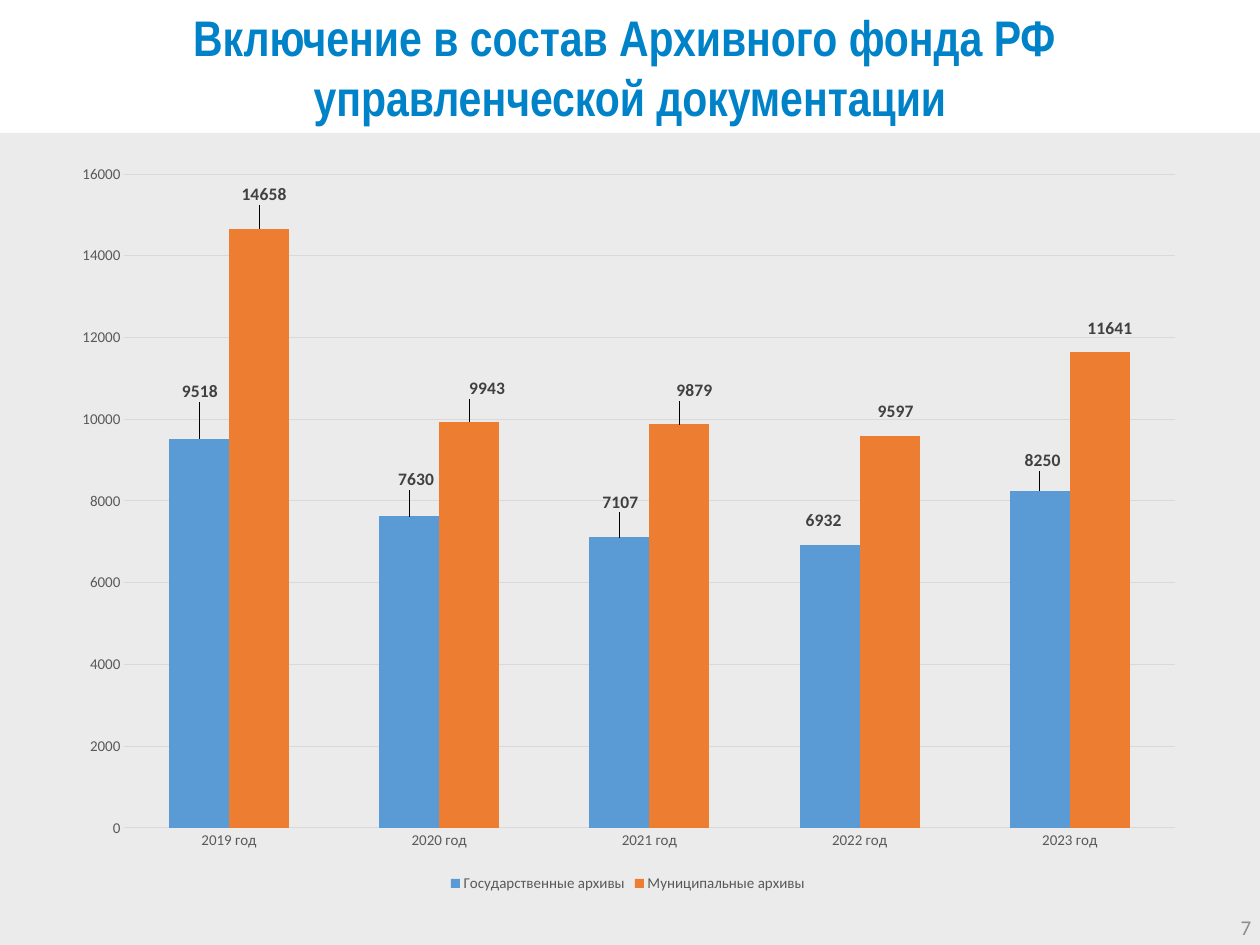
from lxml.etree import SubElement
from pptx import Presentation
from pptx.chart.data import CategoryChartData
from pptx.dml.color import RGBColor
from pptx.enum.chart import XL_CHART_TYPE, XL_LABEL_POSITION, XL_LEGEND_POSITION, XL_TICK_MARK
from pptx.enum.shapes import MSO_SHAPE
from pptx.enum.text import MSO_ANCHOR, MSO_AUTO_SIZE, PP_ALIGN
from pptx.oxml import parse_xml
from pptx.oxml.ns import nsdecls, qn
from pptx.util import Pt

PIXEL = 10160
TITLE = ["Включение в состав Архивного фонда РФ ", "управленческой документации"]
YEARS = ["2019 год", "2020 год", "2021 год", "2022 год", "2023 год"]
SERIES = [
    {
        "name": "Государственные архивы",
        "values": [9518, 7630, 7107, 6932, 8250],
        "color": "5B9BD5",
        "label_shifts": [(1, -33), (7, -22), (1, -21), (-6, -10), (3, -16)],
    },
    {
        "name": "Муниципальные архивы",
        "values": [14658, 9943, 9879, 9597, 11641],
        "color": "ED7D31",
        "label_shifts": [(5, -20), (18, -19), (15, -19), (6, -10), (10, -9)],
    },
]
TITLE_FONT = {"name": "Arial Narrow", "size": Pt(40), "bold": True}
NUMBER_FONT = {"name": "Calibri", "size": Pt(16.8)}
AXIS_FONT = {"name": "Calibri", "size": Pt(12), "bold": False}
LABEL_FONT = {"name": "Calibri", "size": Pt(14), "bold": True}


def emu(*lengths):
    return [length * PIXEL for length in lengths]


def rgb(color):
    return RGBColor.from_string(color)


def format_font(font, values, color):
    for name, value in values.items():
        setattr(font, name, value)
    font.color.rgb = rgb(color)


def manual_layout(values):
    layout = parse_xml(f"<c:layout {nsdecls('c')}/>")
    manual = SubElement(layout, qn("c:manualLayout"))
    for name, value in values.items():
        SubElement(manual, qn(f"c:{name}")).set("val", str(value))
    return layout


def add_panel(page, box, fill, line=None):
    panel = page.shapes.add_shape(MSO_SHAPE.RECTANGLE, *emu(*box))
    panel.shadow.inherit = False
    panel.fill.solid()
    panel.fill.fore_color.rgb = rgb(fill)
    if line:
        panel.line.color.rgb = rgb(line)
        panel.line.width = Pt(1)
    else:
        panel.line.fill.background()


def write_text(shape, box, lines, font, color, alignment, anchor):
    shape.left, shape.top, shape.width, shape.height = emu(*box)
    frame = shape.text_frame
    settings = {"word_wrap": True, "auto_size": MSO_AUTO_SIZE.NONE, "vertical_anchor": anchor}
    for name, value in settings.items():
        setattr(frame, name, value)
    for index, line in enumerate(lines):
        para = frame.add_paragraph() if index else frame.paragraphs[0]
        para.alignment = alignment
        para.line_spacing = 1.0
        para.space_before = Pt(0)
        span = para.add_run()
        span.text = line
        format_font(span.font, font, color)


def add_header(page, box):
    title = page.shapes.title
    page.shapes._spTree.append(title._element)
    write_text(title, box, TITLE, TITLE_FONT, "0082C8", PP_ALIGN.CENTER, MSO_ANCHOR.TOP)


def add_page_number(page, box):
    number = page.shapes.add_textbox(*emu(*box))
    write_text(number, box, ["7"], NUMBER_FONT, "8C8C8C", PP_ALIGN.RIGHT, MSO_ANCHOR.MIDDLE)


def format_axes(chart):
    for axis in (chart.category_axis, chart.value_axis):
        axis.major_tick_mark = axis.minor_tick_mark = XL_TICK_MARK.NONE
        axis.format.line.fill.background()
        format_font(axis.tick_labels.font, AXIS_FONT, "595959")
    value_axis = chart.value_axis
    value_axis.minimum_scale = 0
    value_axis.maximum_scale = 16000
    value_axis.major_unit = 2000
    value_axis.has_major_gridlines = True
    grid = value_axis.major_gridlines.format.line
    grid.color.rgb = rgb("D9D9D9")
    grid.width = Pt(0.75)


def format_series(series, details, width, height):
    series.format.fill.solid()
    series.format.fill.fore_color.rgb = rgb(details["color"])
    labels = series.data_labels
    labels.show_value = True
    labels.position = XL_LABEL_POSITION.OUTSIDE_END
    format_font(labels.font, LABEL_FONT, "404040")
    for index in range(len(YEARS)):
        label = series.points[index].data_label
        format_font(label.font, LABEL_FONT, "404040")
        label.position = XL_LABEL_POSITION.OUTSIDE_END
    point_labels = series._element.xpath("c:dLbls/c:dLbl")
    for element, (right, down) in zip(point_labels, details["label_shifts"]):
        element.insert(1, manual_layout({"x": right / width, "y": down / height}))


def add_archive_chart(page, box):
    left, top, width, height = box
    data = CategoryChartData()
    data.categories = YEARS
    for details in SERIES:
        data.add_series(details["name"], details["values"])
    chart = page.shapes.add_chart(XL_CHART_TYPE.COLUMN_CLUSTERED, *emu(*box), data).chart
    chart.has_title = False
    format_font(chart.font, {"name": "Calibri", "size": Pt(10)}, "000000")
    chart.has_legend = True
    chart.legend.position = XL_LEGEND_POSITION.BOTTOM
    chart.legend.include_in_layout = False
    format_font(chart.legend.font, AXIS_FONT, "595959")
    format_axes(chart)
    plot = chart.plots[0]
    plot.gap_width = 150
    plot.overlap = 0
    plot.vary_by_categories = False
    for series, details in zip(plot.series, SERIES):
        format_series(series, details, width, height)
    area = chart._chartSpace.xpath("c:chart/c:plotArea")[0]
    for layout in area.findall(qn("c:layout")):
        area.remove(layout)
    area.insert(0, manual_layout({
        "layoutTarget": "inner", "xMode": "edge", "yMode": "edge",
        "x": 65 / width, "y": 23 / height, "w": 1051 / width, "h": 654 / height,
    }))


def main():
    deck = Presentation()
    deck.slide_width, deck.slide_height = emu(1260, 945)
    page = deck.slides.add_slide(deck.slide_layouts[5])
    add_panel(page, (-11, 0, 1271, 128), "FFFFFF", "FFFFFF")
    add_panel(page, (0, 133, 1260, 812), "EBEBEB")
    add_header(page, (0, 2, 1260, 130))
    add_page_number(page, (976, 902, 284, 50))
    add_archive_chart(page, (59, 151, 1138, 745))
    deck.save("out.pptx")


if __name__ == "__main__":
    main()
